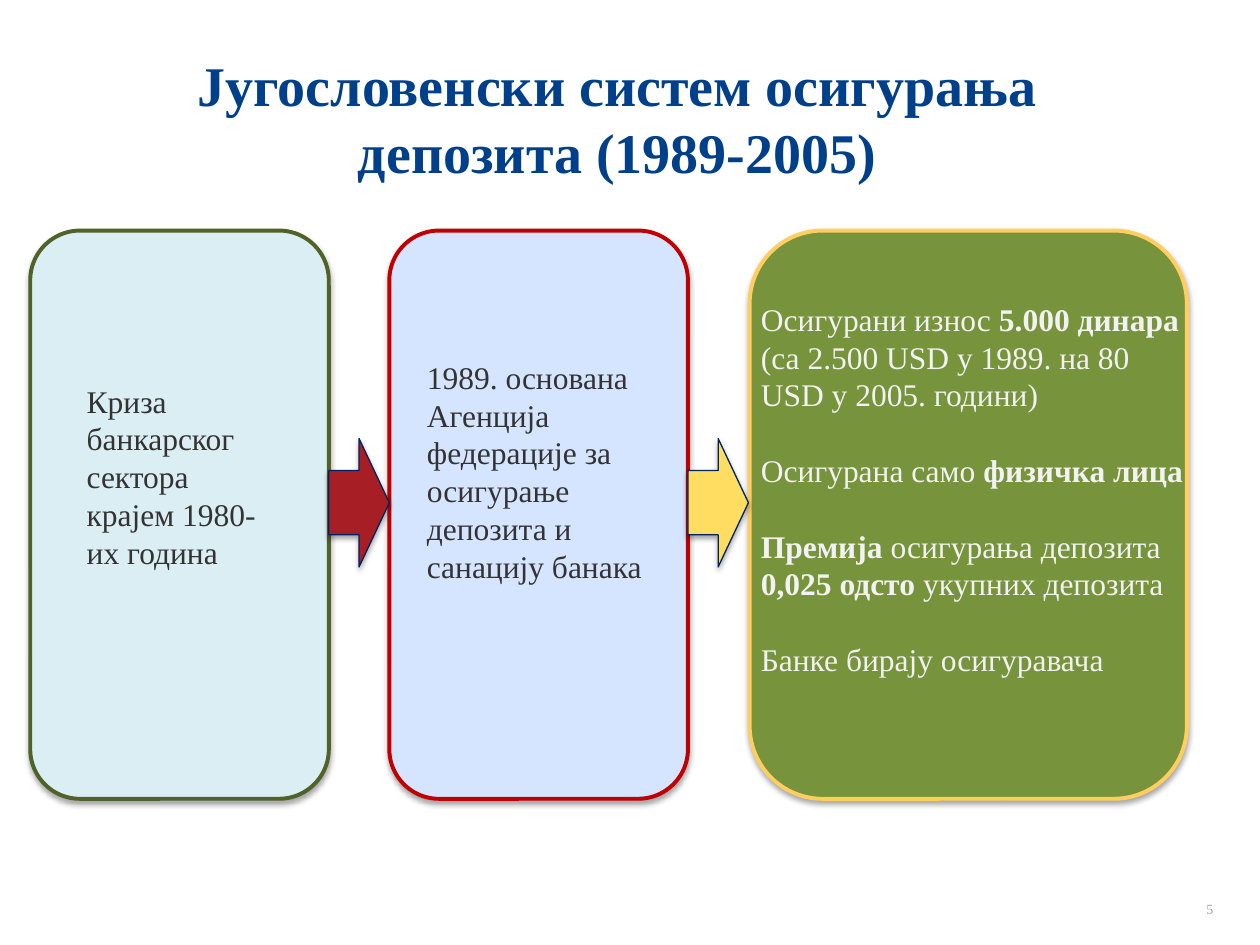
"""Build the slide on the Yugoslav deposit insurance system."""
from dataclasses import dataclass

from pptx import Presentation
from pptx.dml.color import RGBColor
from pptx.enum.shapes import MSO_SHAPE as Shape
from pptx.enum.text import MSO_ANCHOR as Anchor, MSO_AUTO_SIZE as AutoSize, PP_ALIGN as Align
from pptx.util import Inches, Pt


@dataclass(frozen=True)
class Theme:
    font: str = "Times New Roman"
    title_color: str = "003F8A"
    dark_text: str = "333333"
    light_text: str = "F2F2F2"
    number_color: str = "A6A6A6"
    arrow_line: str = "00225D"
    title_size: int = 32
    body_size: int = 18
    number_size: int = 8


theme = Theme()


def write_text(frame, paragraphs, size, color, bold=False, align=Align.LEFT,
               anchor=Anchor.TOP, margins=(0.1, 0.05), gap=0):
    frame.word_wrap = True
    frame.auto_size = AutoSize.NONE
    frame.vertical_anchor = anchor
    frame.margin_left = frame.margin_right = Inches(margins[0])
    frame.margin_top = Inches(margins[1])
    frame.margin_bottom = Inches(0.05)
    for index, text in enumerate(paragraphs):
        paragraph = frame.add_paragraph() if index else frame.paragraphs[0]
        paragraph.alignment = align
        paragraph.line_spacing = Pt(size * 1.2)
        paragraph.space_before = Pt(gap if index else 0)
        for position, part in enumerate(text.split("**")):
            if not part:
                continue
            run = paragraph.add_run()
            run.text = part
            run.font.name = theme.font
            run.font.size = Pt(size)
            run.font.bold = bold or position % 2 == 1
            run.font.color.rgb = RGBColor.from_string(color)


def add_block(kind, place, fill, line, width):
    shape = slide.shapes.add_shape(kind, *map(Inches, place))
    shape.fill.solid()
    shape.fill.fore_color.rgb = RGBColor.from_string(fill)
    shape.line.color.rgb = RGBColor.from_string(line)
    shape.line.width = Pt(width)


presentation = Presentation()
presentation.slide_width, presentation.slide_height = Inches(10), Inches(7.5)
slide = presentation.slides.add_slide(presentation.slide_layouts[5])

title = slide.shapes.title
title.left, title.top, title.width, title.height = map(Inches, (0.5, 0.32, 8.8, 0.71))
write_text(title.text_frame, ["Југословенски систем осигурања депозита (1989-2005)"],
           theme.title_size, theme.title_color, bold=True, align=Align.CENTER,
           margins=(0.2, 0.08))

panels = [
    (0.24, 2.37, "DBEEF4", "4F6228"),
    (3.09, 2.37, "D6E5FF", "C00000"),
    (5.95, 3.47, "77933C", "FFCE5E"),
]
for left, width, fill, line in panels:
    add_block(Shape.ROUNDED_RECTANGLE, (left, 1.83, width, 4.51), fill, line, 2.25)

for (left, width, *_), fill in zip(panels, ("A71F24", "FFDD61")):
    add_block(Shape.RIGHT_ARROW, (left + width, 3.48, 0.48, 1.02), fill, theme.arrow_line, 0.75)

texts = [
    ((0.59, 2.98, 1.67, 1.62), ["Криза банкарског сектора крајем 1980-их година"],
     dict(size=theme.body_size, color=theme.dark_text)),
    ((3.29, 2.79, 1.96, 1.92),
     ["1989. основана Агенција федерације за осигурање депозита и санацију банака"],
     dict(size=theme.body_size, color=theme.dark_text)),
    ((5.94, 2.03, 3.58, 3.43),
     ["Осигурани износ **5.000 динара** (са 2.500 USD у 1989. на 80 USD у 2005. години)",
      "Осигурана само **физичка лица**",
      "**Премија** осигурања депозита **0,025 одсто **укупних депозита",
      "Банке бирају осигуравача"],
     dict(size=theme.body_size, color=theme.light_text, margins=(0.1, 0.35), gap=21.6)),
    ((7.4, 6.93, 2.33, 0.4), ["5"],
     dict(size=theme.number_size, color=theme.number_color, align=Align.RIGHT,
          anchor=Anchor.BOTTOM)),
]
for place, paragraphs, style in texts:
    text_box = slide.shapes.add_textbox(*map(Inches, place))
    write_text(text_box.text_frame, paragraphs, **style)

presentation.save("out.pptx")
